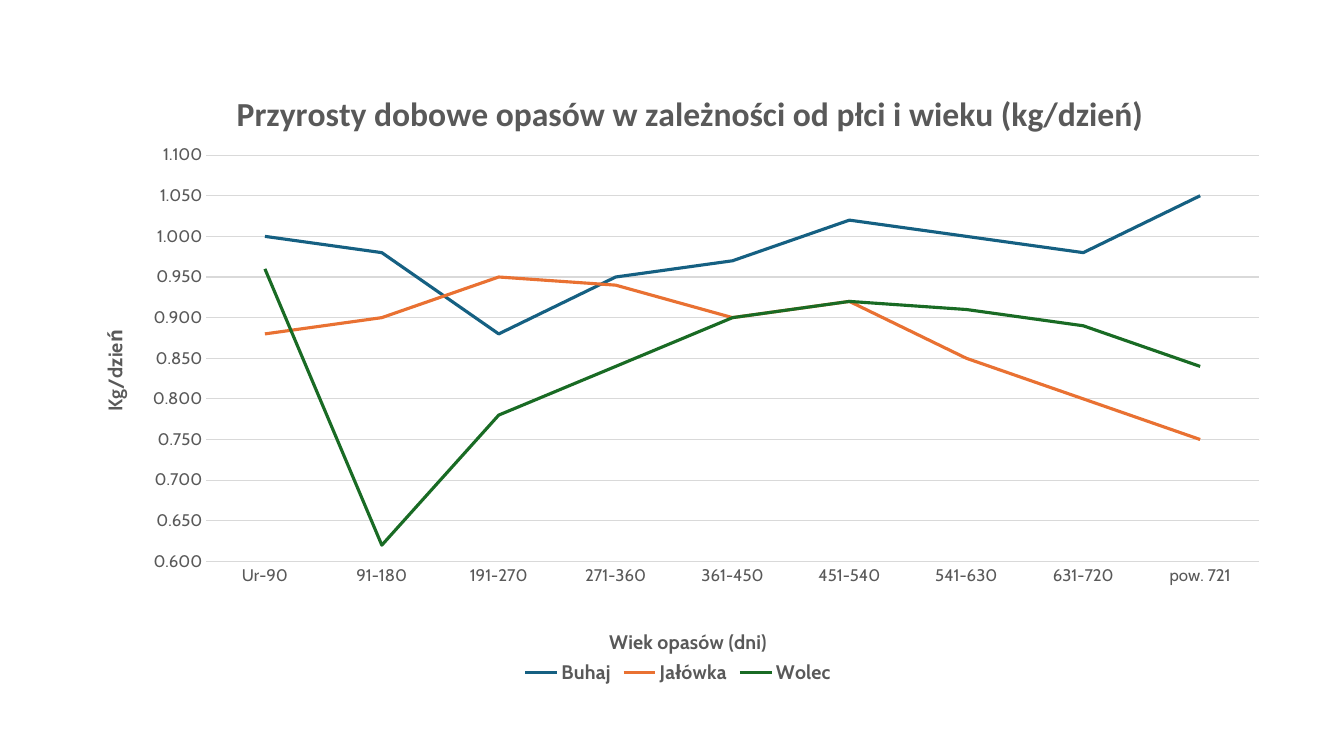
from dataclasses import dataclass

from lxml.etree import SubElement
from pptx import Presentation
from pptx.chart.chart import Chart
from pptx.chart.data import CategoryChartData
from pptx.dml.color import RGBColor
from pptx.dml.line import LineFormat
from pptx.enum.chart import XL_CHART_TYPE as ChartType
from pptx.enum.chart import XL_LEGEND_POSITION as LegendPosition
from pptx.enum.chart import XL_TICK_MARK as TickMark
from pptx.oxml.ns import qn
from pptx.text.text import Font
from pptx.util import Cm, Pt

GREY, GRID = "595959", "D9D9D9"
AGES = ["Ur-90", "91-180", "191-270", "271-360", "361-450",
        "451-540", "541-630", "631-720", "pow. 721"]


@dataclass
class GainSeries:
    name: str
    color: str
    gains: list[float]


SERIES = [
    GainSeries("Buhaj", "156082", [1, 0.98, 0.88, 0.95, 0.97, 1.02, 1, 0.98, 1.05]),
    GainSeries("Jałówka", "E97132", [0.88, 0.9, 0.95, 0.94, 0.9, 0.92, 0.85, 0.8, 0.75]),
    GainSeries("Wolec", "196B24", [0.96, 0.62, 0.78, 0.84, 0.9, 0.92, 0.91, 0.89, 0.84]),
]


def rgb(color: str) -> RGBColor:
    return RGBColor.from_string(color)


def style_font(font: Font, size: float, bold: bool = False, name: str = "Cabin") -> None:
    font.name = name
    font.size = Pt(size)
    font.bold = bold
    font.color.rgb = rgb(GREY)


def style_line(line: LineFormat, color: str, width: float) -> None:
    line.color.rgb = rgb(color)
    line.width = Pt(width)


def place(element, **fractions: float) -> None:
    """Set a manual layout, in fractions of the chart area."""
    layout = element.find(qn("c:layout"))
    if layout is None:
        layout = SubElement(element, qn("c:layout"))
        text = element.find(qn("c:tx"))
        if text is None:
            element.insert(0, layout)
        else:
            text.addnext(layout)
    for child in list(layout):
        layout.remove(child)
    manual = SubElement(layout, qn("c:manualLayout"))
    if "w" in fractions:
        SubElement(manual, qn("c:layoutTarget")).set("val", "inner")
    for mode in ("xMode", "yMode"):
        SubElement(manual, qn(f"c:{mode}")).set("val", "edge")
    for key, value in fractions.items():
        SubElement(manual, qn(f"c:{key}")).set("val", str(value))


def write_title(title, text: str, *, x: float, y: float, size: float = 14,
                font_name: str = "Cabin", rotation: int = 0) -> None:
    frame = title.text_frame
    frame.text = text
    style_font(frame.paragraphs[0].runs[0].font, size, True, font_name)
    element = title._element
    body = next(element.iter(qn("a:bodyPr")))
    body.set("rot", str(rotation * 60000))
    body.set("vert", "horz")
    place(element, x=x, y=y)


def style_axes(chart: Chart) -> None:
    ages, gains = chart.category_axis, chart.value_axis
    for axis in (ages, gains):
        axis.major_tick_mark = axis.minor_tick_mark = TickMark.NONE
        style_font(axis.tick_labels.font, 12)
    style_line(ages.format.line, GRID, 0.75)
    gains.format.line.fill.background()
    gains.minimum_scale, gains.maximum_scale, gains.major_unit = 0.6, 1.1, 0.05
    gains.tick_labels.number_format = "###0.000"
    gains.tick_labels.number_format_is_linked = False
    gains.has_major_gridlines = True
    style_line(gains.major_gridlines.format.line, GRID, 0.75)
    write_title(ages.axis_title, "Wiek opasów (dni)", x=0.44, y=0.9)
    write_title(gains.axis_title, "Kg/dzień", x=0.02, y=0.43, rotation=-90)


def main() -> None:
    presentation = Presentation()
    presentation.slide_width, presentation.slide_height = Cm(33.87), Cm(19.05)
    slide = presentation.slides.add_slide(presentation.slide_layouts[6])

    # Chart data
    data = CategoryChartData(number_format="###0.000")
    data.categories = AGES
    for series in SERIES:
        data.add_series(series.name, series.gains)
    chart = slide.shapes.add_chart(
        ChartType.LINE, Cm(1.85), Cm(1.35), Cm(30.48), Cm(16), data).chart
    style_font(chart.font, 10)

    # Title, axes and plot area
    chart.has_title = True
    write_title(chart.chart_title, "Przyrosty dobowe opasów w zależności od płci i wieku (kg/dzień)",
                x=0.13, y=0.05, size=24, font_name="Calibri")
    style_axes(chart)
    place(next(chart._chartSpace.iter(qn("c:plotArea"))), x=0.11, y=0.16, w=0.87, h=0.64)

    # Lines
    plot = chart.plots[0]
    plot.vary_by_categories = False
    for line, series in zip(plot.series, SERIES):
        line.smooth = False
        style_line(line.format.line, series.color, 2.25)

    # Legend
    chart.has_legend = True
    chart.legend.position = LegendPosition.BOTTOM
    chart.legend.include_in_layout = False
    style_font(chart.legend.font, 14, True)

    presentation.save("out.pptx")


if __name__ == "__main__":
    main()
